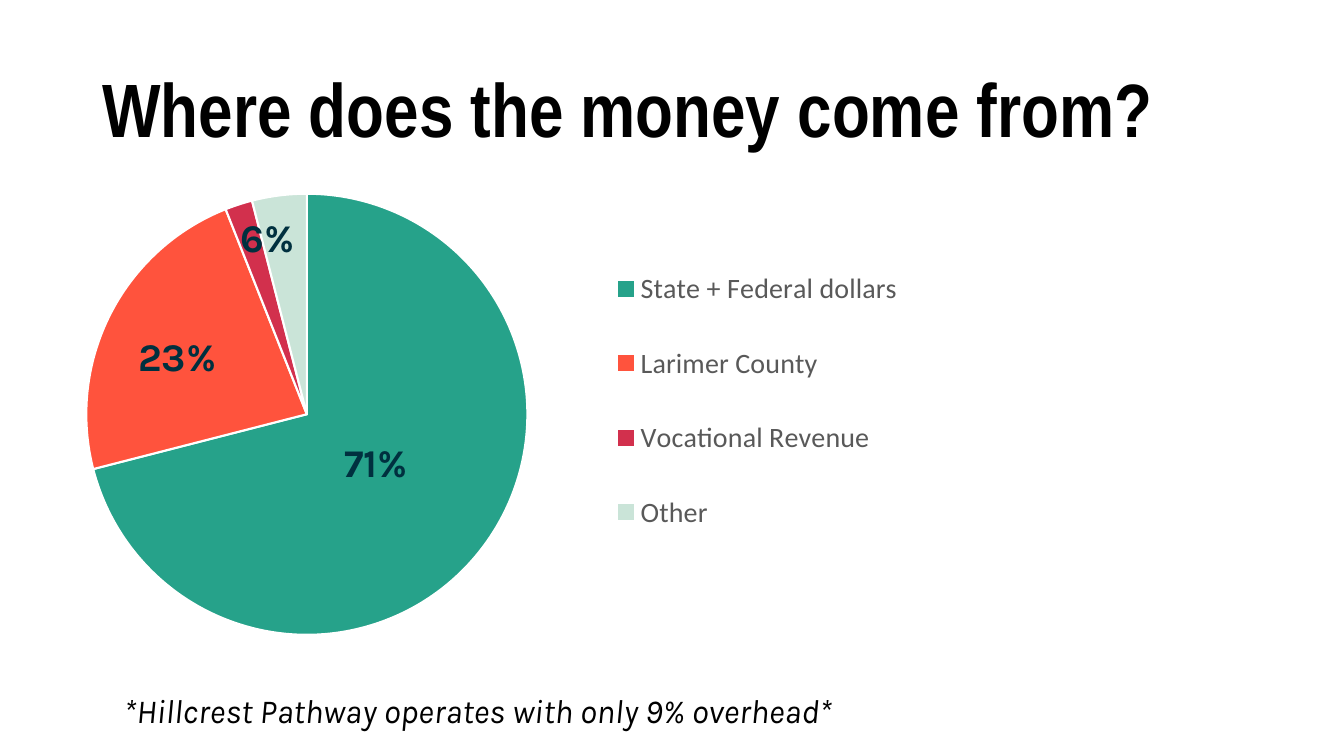
"""Build a slide with a pie chart of funding sources."""
from lxml import etree
from pptx import Presentation
from pptx.chart.data import CategoryChartData
from pptx.dml.color import RGBColor
from pptx.enum.chart import XL_CHART_TYPE as CHART, XL_LEGEND_POSITION as LEGEND
from pptx.enum.text import MSO_ANCHOR as ANCHOR, MSO_AUTO_SIZE as AUTO, PP_ALIGN as ALIGN
from pptx.oxml import parse_xml
from pptx.oxml.ns import nsdecls, qn
from pptx.util import Pt

COLORS = {
    "black": "000000", "white": "FFFFFF", "navy": "00303F", "gray": "595959",
    "teal": "26A28A", "orange": "FF533D", "red": "D2304D", "mint": "CAE4D8",
}
FUNDING = [
    ("State + Federal dollars", 71, "teal"),
    ("Larimer County", 23, "orange"),
    ("Vocational Revenue", 2, "red"),
    ("Other", 4, "mint"),
]
SHARES = [("71%", 239, 309.5), ("23%", 91.5, 233.5), ("6%", 165, 149)]


def rgb(name):
    return RGBColor.from_string(COLORS[name])


def style_font(font, name, size, color, bold=False, italic=False):
    font.name, font.size = name, Pt(size)
    font.bold, font.italic = bold, italic
    font.color.rgb = rgb(color)


def write(tf, text, anchor=ANCHOR.TOP, line_spacing=None, **fmt):
    tf.word_wrap = True
    tf.auto_size = AUTO.NONE
    tf.vertical_anchor = anchor
    p = tf.paragraphs[0]
    p.alignment = ALIGN.LEFT
    p.line_spacing = line_spacing
    r = p.add_run()
    r.text = text
    style_font(r.font, **fmt)


def add_title(slide, text):
    sp = slide.shapes.title
    sp.left, sp.top, sp.width, sp.height = Pt(66), Pt(29), Pt(828), Pt(104)
    write(sp.text_frame, text, anchor=ANCHOR.MIDDLE, line_spacing=0.9,
          name="Arial Narrow", size=54, color="black", bold=True)


def add_text(slide, text, left, top, width, height, **fmt):
    sp = slide.shapes.add_textbox(Pt(left), Pt(top), Pt(width), Pt(height))
    write(sp.text_frame, text, name="Karla", **fmt)


def make_layout(x, y, w, h, inner=False):
    layout = parse_xml(f"<c:layout {nsdecls('c')}><c:manualLayout/></c:layout>")
    manual = layout[0]
    settings = [("layoutTarget", "inner")] if inner else []
    settings += [("xMode", "edge"), ("yMode", "edge"),
                 ("x", x), ("y", y), ("w", w), ("h", h)]
    for tag, value in settings:
        etree.SubElement(manual, qn(f"c:{tag}")).set("val", str(value))
    return layout


def add_pie(slide, left, top, width, height):
    data = CategoryChartData()
    data.categories = [source for source, _, _ in FUNDING]
    data.add_series("Series 1", [share for _, share, _ in FUNDING])
    chart = slide.shapes.add_chart(
        CHART.PIE, Pt(left), Pt(top), Pt(width), Pt(height), data).chart
    chart.has_title = False
    style_font(chart.font, "Calibri", 10, "black")

    plot = chart.plots[0]
    plot.vary_by_categories = True
    for i, (_, _, color) in enumerate(FUNDING):
        fmt = plot.series[0].points[i].format
        fmt.fill.solid()
        fmt.fill.fore_color.rgb = rgb(color)
        fmt.line.color.rgb = rgb("white")
        fmt.line.width = Pt(1.5)

    chart.has_legend = True
    legend = chart.legend
    legend.position = LEGEND.BOTTOM
    legend.include_in_layout = False
    style_font(legend.font, "Calibri", 20, "gray")

    area = chart.element.find(".//" + qn("c:plotArea"))
    for old in area.findall(qn("c:layout")):
        area.remove(old)
    area.insert(0, make_layout(0.09, 0.11, 0.46, 0.8, inner=True))
    key = chart.element.find(".//" + qn("c:legend"))
    for old in key.findall(qn("c:layout")):
        key.remove(old)
    key.find(qn("c:legendPos")).addnext(make_layout(0.63, 0.18, 0.32, 0.61))


def main():
    prs = Presentation()
    prs.slide_width, prs.slide_height = Pt(960), Pt(540)
    slide = prs.slides.add_slide(prs.slide_layouts[5])
    add_title(slide, "Where does the money come from?")
    add_pie(slide, 0, 94.5, 685, 395)
    add_text(slide, "*Hillcrest Pathway operates with only 9% overhead*",
             81.5, 489.5, 797, 36, size=24, color="black", italic=True)
    for share, left, top in SHARES:
        add_text(slide, share, left, top, 85, 41, size=28, color="navy", bold=True)
    prs.save("out.pptx")


if __name__ == "__main__":
    main()
